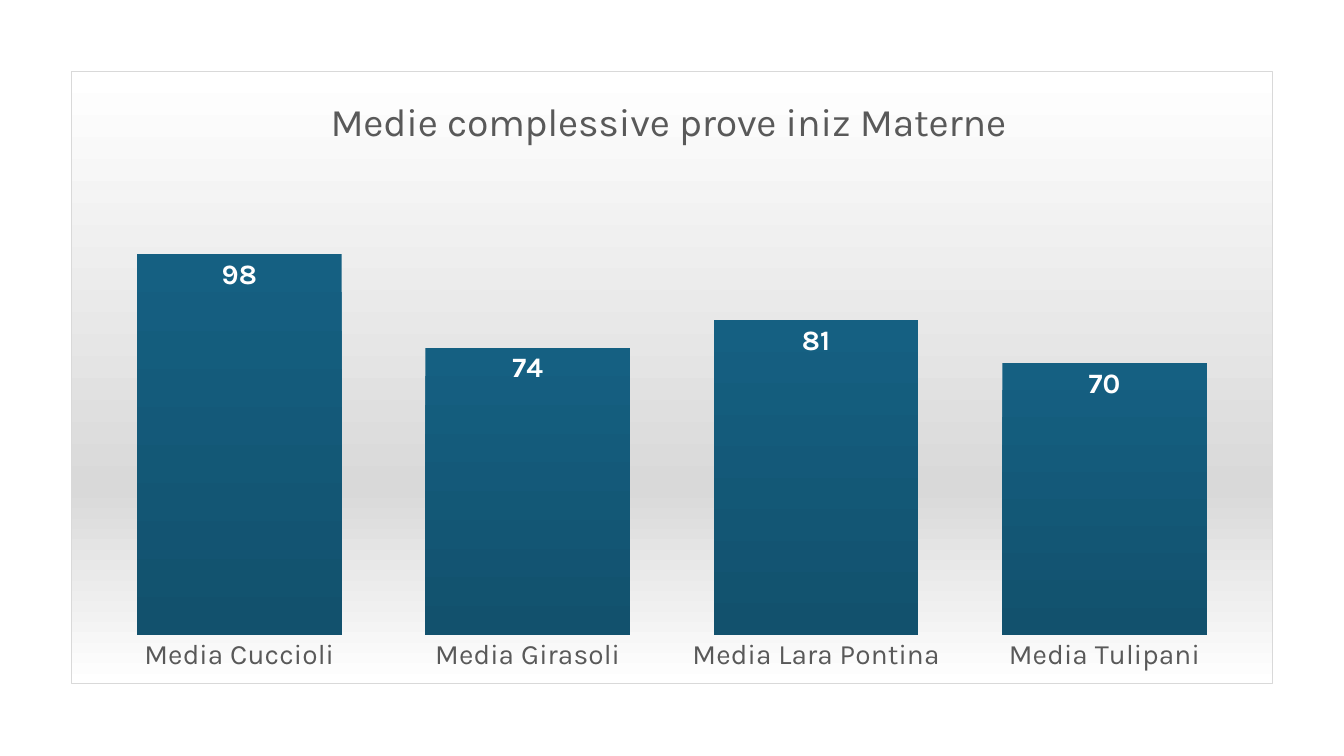
from lxml import etree
from pptx import Presentation
from pptx.chart.data import CategoryChartData
from pptx.dml.color import RGBColor
from pptx.enum.chart import XL_CHART_TYPE, XL_LABEL_POSITION, XL_TICK_LABEL_POSITION, XL_TICK_MARK
from pptx.oxml import parse_xml
from pptx.util import Inches, Pt

COLUMN = XL_CHART_TYPE.COLUMN_CLUSTERED
IN_END = XL_LABEL_POSITION.INSIDE_END
NEXT = XL_TICK_LABEL_POSITION.NEXT_TO_AXIS
NO_TICK = XL_TICK_MARK.NONE
NS = {
    "a": "http://schemas.openxmlformats.org/drawingml/2006/main",
    "c": "http://schemas.openxmlformats.org/drawingml/2006/chart",
}
DECL = " ".join(f'xmlns:{key}="{uri}"' for key, uri in NS.items())
HUES = {"white": "FFFFFF", "gray": "D9D9D9", "text": "595959", "blue": "156082", "deep": "12516D"}
MEANS = {"Media Cuccioli": 98, "Media Girasoli": 74, "Media Lara Pontina": 81, "Media Tulipani": 70}


class Deck:
    """Hold the style and the current slide, and add charts to it."""

    def __init__(self, wide, high, face):
        self.show = Presentation()
        self.show.slide_width, self.show.slide_height = Inches(wide), Inches(high)
        self.face = face
        self.slide = self.show.slides.add_slide(self.show.slide_layouts[6])

    def style(self, font, hue, size, **more):
        for key, val in {"name": self.face, "size": Pt(size), "bold": False, **more}.items():
            setattr(font, key, val)
        font.color.rgb = RGBColor.from_string(HUES[hue])

    def shade(self, *stops):
        marks = "".join(
            f'<a:gs pos="{at * 1000}"><a:srgbClr val="{HUES[hue]}"/></a:gs>' for at, hue in stops
        )
        return (
            f'<a:gradFill {DECL} rotWithShape="1"><a:gsLst>{marks}</a:gsLst>'
            '<a:lin ang="5400000" scaled="0"/></a:gradFill>'
        )

    def place(self, node, **spots):
        for old in node.findall("c:layout", NS):
            node.remove(old)
        modes = "".join(f'<c:{key}Mode val="edge"/>' for key in "xy")
        inner = '<c:layoutTarget val="inner"/>' if "w" in spots else ""
        sides = "".join(f'<c:{key} val="{val}"/>' for key, val in spots.items())
        text = node.find("c:tx", NS)
        node.insert(0 if text is None else 1, parse_xml(
            f"<c:layout {DECL}><c:manualLayout>{inner}{modes}{sides}</c:manualLayout></c:layout>"
        ))

    def chart(self, head, means, left, top, wide, high):
        data = CategoryChartData(number_format="0")
        data.categories = list(means)
        data.add_series("Series 1", list(means.values()))
        spans = (self.show.slide_width, self.show.slide_height) * 2
        box = [int(part * span) for part, span in zip((left, top, wide, high), spans)]
        chart = self.slide.shapes.add_chart(COLUMN, *box, data).chart
        chart.has_legend = False
        self.style(chart.font, "text", 10)
        self.title(chart, head)
        self.axes(chart)
        self.bars(chart.plots[0])
        self.frame(chart)

    def title(self, chart, head):
        frame = chart.chart_title.text_frame
        frame.text = head
        self.style(frame.paragraphs[0].runs[0].font, "text", 28)
        self.place(chart.chart_title._element, x=0.21, y=0.03)

    def axes(self, chart):
        cat, val = chart.category_axis, chart.value_axis
        for axis in (cat, val):
            looks = {"has_major_gridlines": False, "major_tick_mark": NO_TICK, "minor_tick_mark": NO_TICK}
            for key, look in looks.items():
                setattr(axis, key, look)
        for key, look in {"visible": False, "minimum_scale": 0, "maximum_scale": 120}.items():
            setattr(val, key, look)
        cat.tick_label_position = NEXT
        cat.format.line.fill.background()
        self.style(cat.tick_labels.font, "text", 20)

    def bars(self, plot):
        plot.gap_width, plot.vary_by_categories = 41, False
        bars = plot.series[0]
        bars.invert_if_negative = False
        bars._element.get_or_add_spPr().insert(0, parse_xml(self.shade((0, "blue"), (100, "deep"))))
        tags = bars.data_labels
        looks = {
            "show_value": True,
            "position": IN_END,
            "number_format": "0",
            "number_format_is_linked": False,
        }
        for key, look in looks.items():
            setattr(tags, key, look)
        self.style(tags.font, "white", 20, bold=True)

    def frame(self, chart):
        body = chart._chartSpace.find("c:chart", NS)
        self.place(body.find("c:plotArea", NS), x=0.02, y=0.16, w=0.96, h=0.76)
        look = etree.SubElement(body, f"{{{NS['c']}}}spPr")
        look.append(parse_xml(self.shade((0, "white"), (68, "gray"), (100, "white"))))
        look.append(parse_xml(
            f'<a:ln {DECL} w="{Pt(0.75)}"><a:solidFill><a:srgbClr val="{HUES["gray"]}"/>'
            "</a:solidFill></a:ln>"
        ))
        body.addnext(look)


def main():
    deck = Deck(13.33, 7.5, "Karla")
    deck.chart("Medie complessive prove iniz Materne", MEANS, 0.7 / 13.33, 0.7 / 7.5, 11.93 / 13.33, 6.09 / 7.5)
    deck.show.save("out.pptx")


if __name__ == "__main__":
    main()
